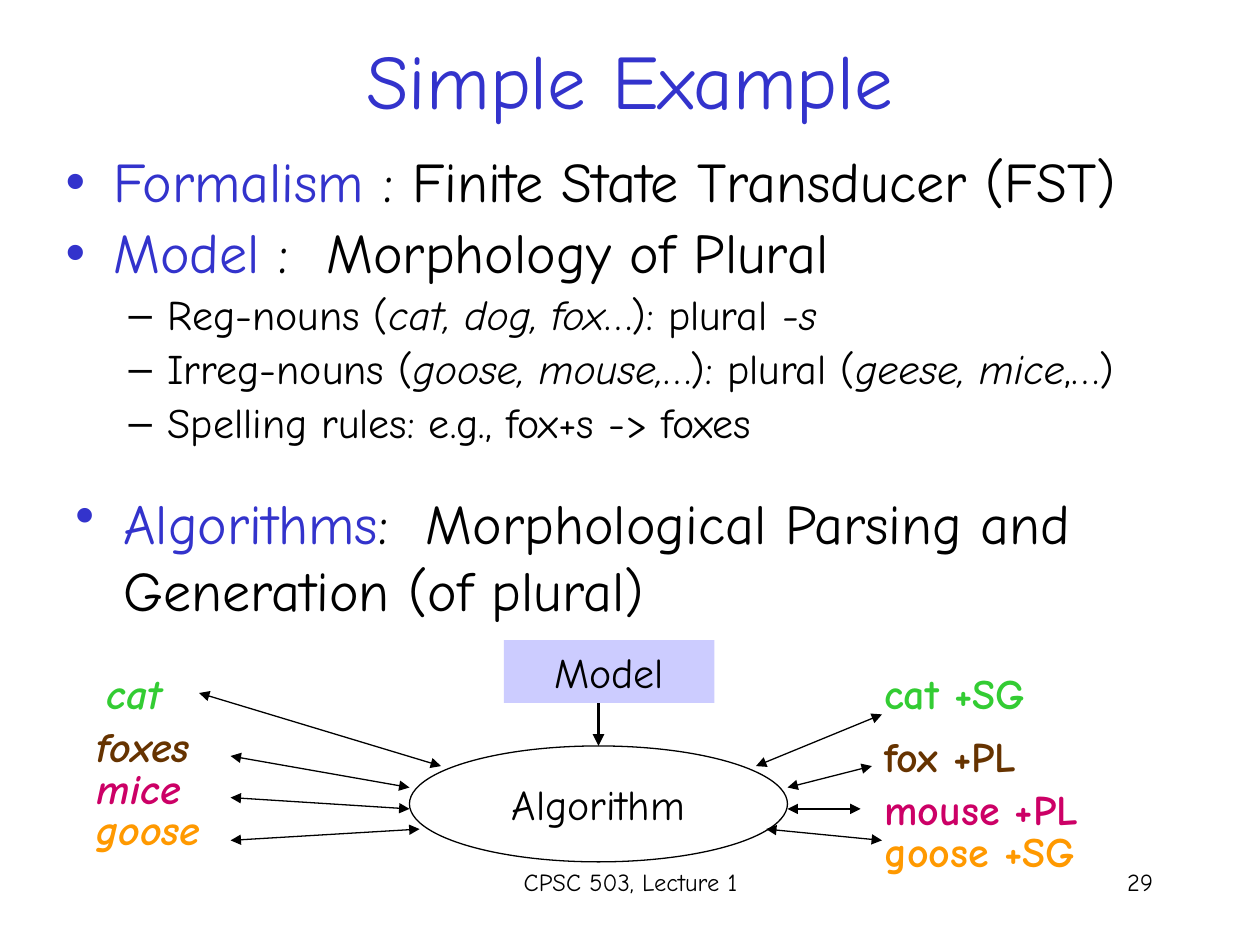
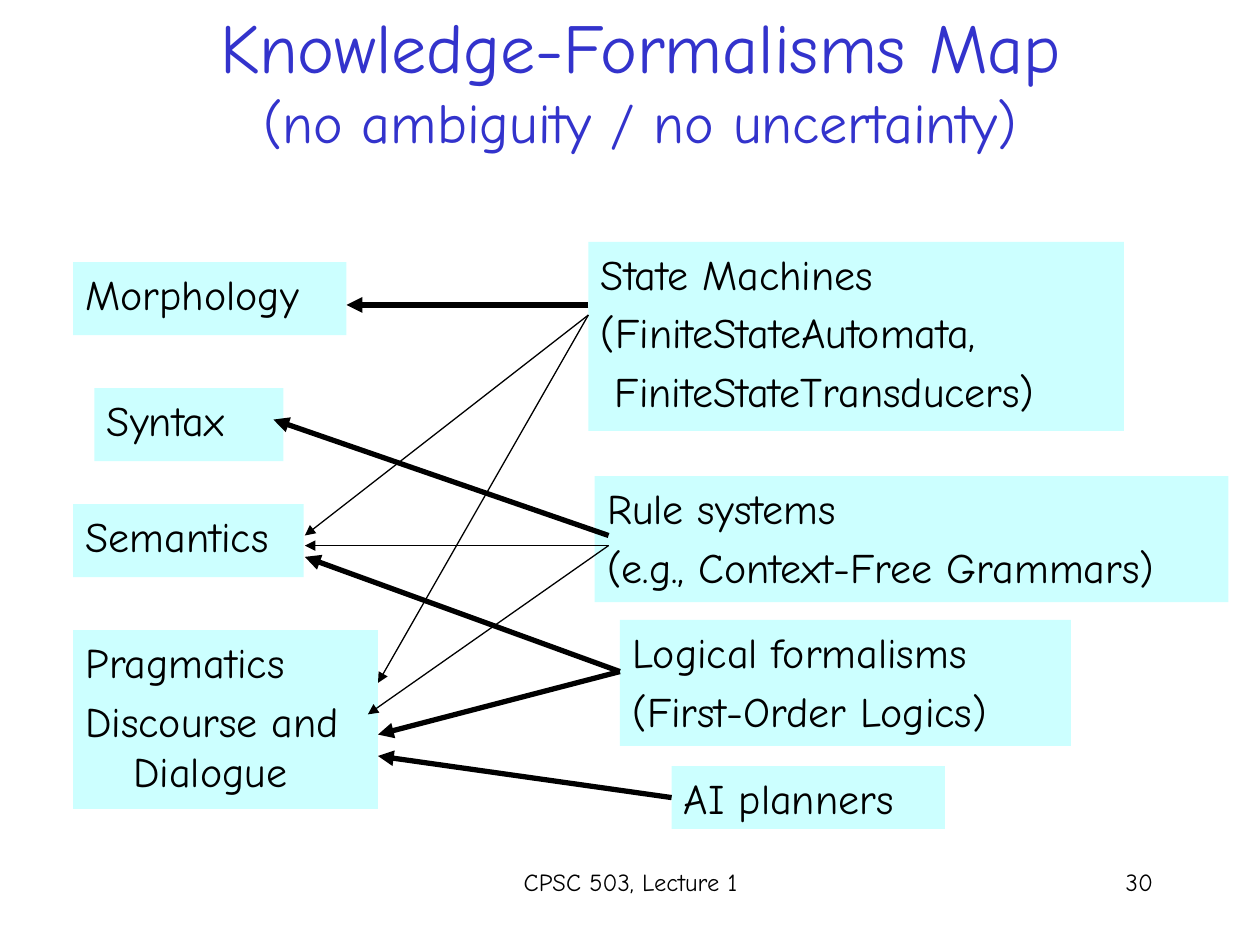
"""Build two lecture slides on formalisms for language knowledge."""
from dataclasses import dataclass

from lxml.etree import SubElement
from pptx import Presentation
from pptx.dml.color import RGBColor as Rgb
from pptx.enum.shapes import MSO_CONNECTOR as Connector, MSO_SHAPE as Shape
from pptx.enum.text import MSO_ANCHOR as Anchor, MSO_AUTO_SIZE as AutoSize, PP_ALIGN as Align
from pptx.oxml.ns import qn
from pptx.util import Inches, Pt


@dataclass(frozen=True)
class Theme:
    """Colours, font and type sizes shared by the slides."""
    font: str = "Comic Neue"
    ink: str = "000000"
    accent: str = "3333CC"
    lilac: str = "CCCCFF"
    aqua: str = "CCFFFF"
    green: str = "33CC33"
    brown: str = "663300"
    pink: str = "CC0066"
    orange: str = "FF9900"
    title: int = 44
    long_title: int = 40
    head: int = 32
    text: int = 24
    footer: int = 14
    thin: float = 0.75
    medium: float = 2.25
    thick: float = 3


THEME = Theme()
ACCENT = {"color": THEME.accent}
ITALIC = {"italic": True}
HANGING = (0.38, -0.38)


def style(span, size=THEME.text, color=THEME.ink, bold=False, italic=False):
    """Format one run of text."""
    font = span.font
    font.name, font.size = THEME.font, Pt(size)
    font.bold, font.italic = bold, italic
    font.color.rgb = Rgb.from_string(color)


def set_bullet(para, bullet, indent):
    """Give a paragraph its indents and its bullet, or none."""
    props = para._p.get_or_add_pPr()
    props.set("marL", str(Inches(indent[0])))
    props.set("indent", str(Inches(indent[1])))
    if bullet:
        SubElement(props, qn("a:buChar")).set("char", bullet)
    else:
        SubElement(props, qn("a:buNone"))


def write(box, *lines, align=Align.LEFT, anchor=Anchor.TOP, bullet=None, indent=HANGING,
          level=0, leading=1.0, gap=0.2, size=THEME.text, **look):
    """Append paragraphs, each a string or a list of (text, overrides) spans."""
    frame = box.text_frame
    frame.word_wrap, frame.auto_size = True, AutoSize.NONE
    frame.vertical_anchor = anchor
    for line in lines:
        first = frame.paragraphs[0]
        para = frame.add_paragraph() if first.runs else first
        para.alignment, para.level = align, level
        para.line_spacing, para.space_before = leading, Pt(size * gap)
        set_bullet(para, bullet, indent)
        for text, changes in [(line, {})] if isinstance(line, str) else line:
            if text == "\n":
                para.add_line_break()
                continue
            span = para.add_run()
            span.text = text
            style(span, **{"size": size, **look, **changes})


def place(box, left, top, width, height):
    """Move and size a box."""
    box.left, box.top = Inches(left), Inches(top)
    box.width, box.height = Inches(width), Inches(height)
    return box


def fill_box(box, color):
    """Fill a box with a plain colour."""
    box.fill.solid()
    box.fill.fore_color.rgb = Rgb.from_string(color)


def add_text(page, at, *lines, **look):
    """Add a text box."""
    box = page.shapes.add_textbox(*map(Inches, at))
    write(box, *lines, **look)


def add_panel(page, at, *lines, fill=THEME.aqua, **look):
    """Add a filled rectangle with text."""
    box = page.shapes.add_shape(Shape.RECTANGLE, *map(Inches, at))
    box.shadow.inherit = False
    box.line.fill.background()
    fill_box(box, fill)
    write(box, *lines, **look)


def add_oval(page, at, text):
    """Add an outlined ellipse with centred text."""
    oval = page.shapes.add_shape(Shape.OVAL, *map(Inches, at))
    oval.shadow.inherit = False
    oval.fill.background()
    oval.line.color.rgb = Rgb.from_string(THEME.ink)
    oval.line.width = Pt(THEME.thin)
    write(oval, text, align=Align.CENTER, anchor=Anchor.MIDDLE, indent=(0, 0), gap=0)


def add_arrow(page, start, end, width=THEME.thin, both=False):
    """Add an arrow, pointed at its end or at both ends."""
    arrow = page.shapes.add_connector(Connector.STRAIGHT, *map(Inches, (*start, *end)))
    arrow.line.color.rgb = Rgb.from_string(THEME.ink)
    arrow.line.width = Pt(width)
    outline = arrow.line._get_or_add_ln()
    for tip in ("a:headEnd", "a:tailEnd") if both else ("a:tailEnd",):
        SubElement(outline, qn(tip)).set("type", "triangle")
    SubElement(arrow._element.spPr, qn("a:effectLst"))


def add_page(deck, number, title_at, title, size):
    """Add a slide with its title and footer; return it with its body."""
    page = deck.slides.add_slide(deck.slide_layouts[1])
    write(place(page.shapes.title, *title_at), title, size=size, color=THEME.accent,
          align=Align.CENTER, anchor=Anchor.MIDDLE, indent=(0, 0), gap=0)
    footer = {"size": THEME.footer, "indent": (0, 0), "gap": 0}
    add_text(page, (3.42, 6.83, 3.17, 0.5), "CPSC 503, Lecture 1", align=Align.CENTER, **footer)
    add_text(page, (7.17, 6.83, 2.08, 0.5), str(number), align=Align.RIGHT, **footer)
    return page, page.placeholders[1]


def add_example_list(page, body):
    """Write the formalism, model and algorithm points."""
    place(body, 0.42, 1.17, 9.58, 2.6)
    write(body,
          [("Formalism ", ACCENT), (": Finite State Transducer (FST)", {})],
          [("Model ", ACCENT), (":  Morphology of Plural", {})],
          bullet="•", size=THEME.head, leading=0.9)
    write(body,
          [("Reg-nouns (", {}), ("cat, dog, fox", ITALIC), ("…): plural ", {}), ("-s", ITALIC)],
          [("Irreg-nouns (", {}), ("goose, mouse,", ITALIC), ("…): plural (", {}),
           ("geese, mice", ITALIC), (",…)", {})],
          "Spelling rules: e.g., fox+s -> foxes",
          bullet="–", indent=(0.81, -0.31), level=1, leading=0.9)
    add_text(page, (0.5, 3.83, 8.67, 1.2),
             [("Algorithms", ACCENT),
              (":  Morphological Parsing and Generation (of plural)", {})],
             bullet="•", size=THEME.head)


def add_parsing_diagram(page):
    """Draw the algorithm between word forms and their analyses."""
    add_panel(page, (4, 5.08, 1.67, 0.5), "Model", fill=THEME.lilac, align=Align.CENTER)
    add_oval(page, (3.25, 5.92, 3, 0.92), "Algorithm")
    add_arrow(page, (4.75, 5.58), (4.75, 5.92), THEME.medium)
    words = [
        ("cat", 0.75, 5.25, "cat +SG", 5.25, THEME.green),
        ("foxes", 0.67, 5.67, "fox +PL", 5.75, THEME.brown),
        ("mice", 0.67, 6, "mouse +PL", 6.17, THEME.pink),
        ("goose", 0.67, 6.33, "goose +SG", 6.5, THEME.orange),
    ]
    for form, left, form_top, analysis, analysis_top, color in words:
        add_text(page, (left, form_top, 1.5, 0.58), form, color=color, bold=True, italic=True)
        add_text(page, (6.92, analysis_top, 2.67, 0.58), analysis, color=color, bold=True)
    links = [
        ((1.58, 5.5), (3.5, 6.08)), ((1.83, 6), (3.25, 6.25)),
        ((1.83, 6.33), (3.25, 6.42)), ((1.83, 6.67), (3.33, 6.58)),
        ((6, 6.08), (7, 5.67)), ((6.25, 6.25), (6.92, 6.08)),
        ((6.25, 6.42), (6.83, 6.42)), ((6.08, 6.58), (7, 6.67)),
    ]
    for start, end in links:
        add_arrow(page, start, end, both=True)


def add_knowledge_map(page, body):
    """Draw kinds of knowledge, formalisms and the arrows between them."""
    fill_box(place(body, 4.92, 4.92, 3.58, 1), THEME.aqua)
    write(body, "Logical formalisms", "(First-Order Logics)")
    panels = [
        ((4.72, 3.78, 5.03, 1), "Rule systems", "(e.g., Context-Free Grammars)"),
        ((4.67, 1.92, 4.25, 1.5), "State Machines", "(FiniteStateAutomata,",
         " FiniteStateTransducers)"),
        ((5.33, 6.08, 2.17, 0.5), "AI planners"),
        ((0.58, 2.08, 2.17, 0.58), "Morphology"),
        ((0.75, 3.08, 1.5, 0.58), "Syntax"),
        ((0.58, 4, 1.83, 0.58), "Semantics"),
        ((0.58, 5, 2.42, 1.42), "Pragmatics", "Discourse and Dialogue"),
    ]
    for at, *lines in panels:
        add_panel(page, at, *lines)
    machines, rules, logic = (4.67, 2.5), (4.83, 4.33), (4.92, 5.33)
    arrows = {
        THEME.thick: [((4.67, 2.42), (2.75, 2.42)), ((4.83, 4.25), (2.17, 3.33)),
                      (logic, (2.42, 4.42)), (logic, (3, 5.83)), ((5.33, 6.33), (3, 6))],
        THEME.thin: [(machines, (2.42, 4.25)), (machines, (3, 5.42)),
                     (rules, (2.42, 4.33)), (rules, (2.92, 5.67))],
    }
    for width, ends in arrows.items():
        for start, end in ends:
            add_arrow(page, start, end, width)


def main():
    """Build and save the deck."""
    deck = Presentation()
    deck.slide_width, deck.slide_height = Inches(10), Inches(7.5)
    page, body = add_page(deck, 29, (0.75, 0, 8.5, 1.25), "Simple Example", THEME.title)
    add_example_list(page, body)
    add_parsing_diagram(page)
    title = [("Knowledge-Formalisms Map", {}), ("\n", {}),
             ("(no ambiguity / no uncertainty)", {"size": THEME.head})]
    page, body = add_page(deck, 30, (1, 0, 8.17, 1.25), title, THEME.long_title)
    add_knowledge_map(page, body)
    deck.save("out.pptx")


if __name__ == "__main__":
    main()
